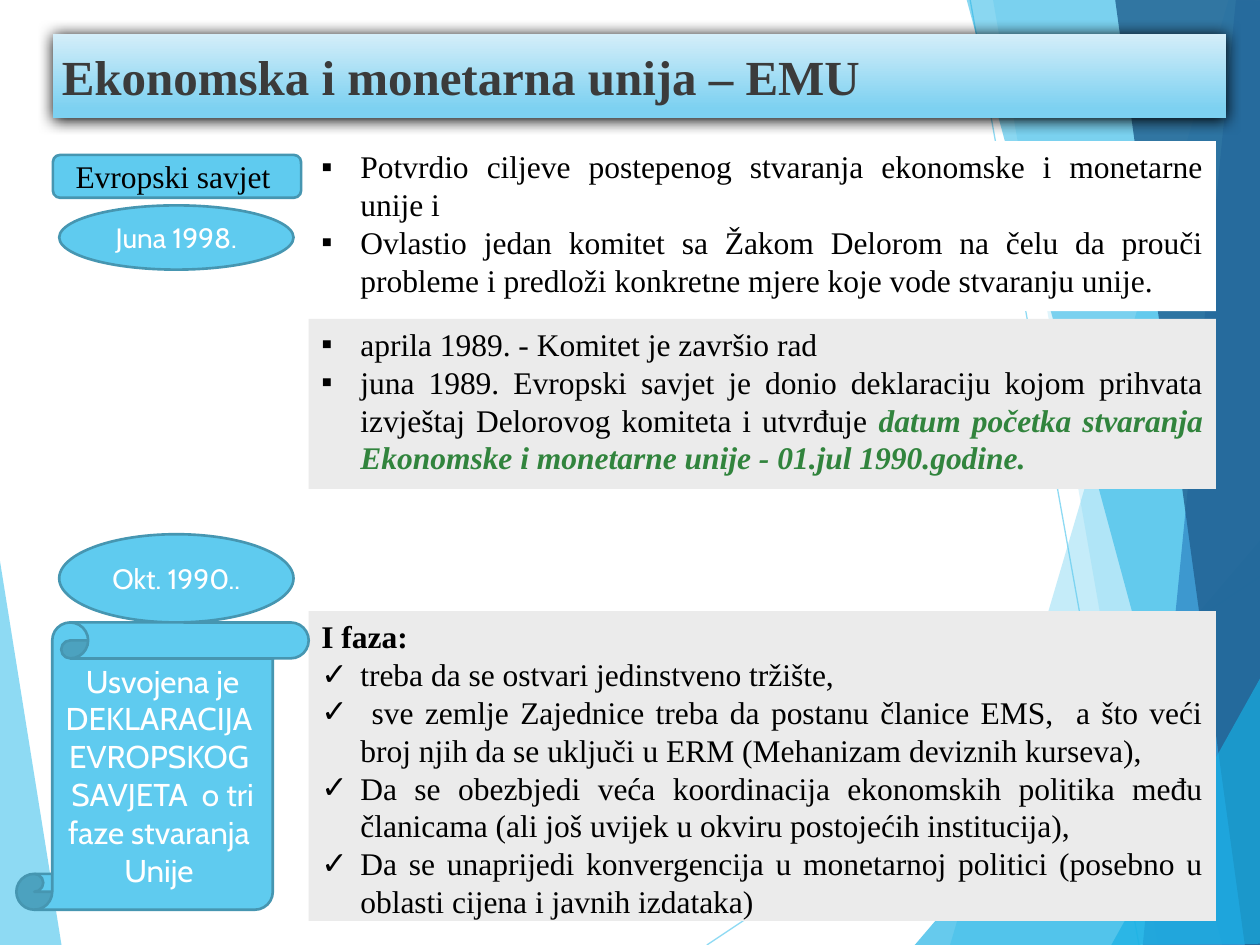
import pptx
import pptx.dml.color
import pptx.enum.dml
import pptx.enum.shapes
import pptx.enum.text
import pptx.oxml
import pptx.oxml.ns
import pptx.util
from pptx.util import Inches

SERIF = "Times New Roman"
SANS = "Cabin"
SKY = "5FCBEF"
BLUE = "17B0E4"
LIGHT_GRAY = "EBEBEB"
ALIGN = pptx.enum.text.PP_ALIGN
ANCHOR = pptx.enum.text.MSO_ANCHOR
SHAPE = pptx.enum.shapes.MSO_SHAPE
NAMESPACE = pptx.oxml.ns.nsdecls("a")

FACETS = [
    (SKY, 70, [(-0.01, 4.39), (0.49, 7.51), (-0.01, 7.5)]),
    (SKY, 36, [(9.75, 0), (7.54, 7.5), (10.02, 7.51), (10.01, 0.01)]),
    (SKY, 20, [(7.88, -0.01), (9.19, 7.5), (10.01, 7.5), (10.01, -0.01)]),
    (BLUE, 66, [(7.26, 7.5), (10, 4.29), (10.01, 7.5)]),
    (BLUE, 50, [(7.67, -0.01), (9.7, 7.5), (10.01, 7.49), (10.01, -0.01)]),
    ("2E83C3", 70, [(9.81, -0.01), (9.07, 7.5), (10.01, 7.5), (10, -0.01)]),
    ("226292", 82, [(8.85, -0.01), (9.88, 7.5), (10.02, 7.5), (10, -0.01)]),
    (BLUE, 66, [(8.82, 7.5), (10.02, 5.35), (10.02, 7.49)]),
]
RAYS = [((5.61, 7.5), (10.01, 4.57)), ((7.7, 0), (9.04, 7.5))]

COUNCIL_ITEMS = [
    ("▪", [("Potvrdio ciljeve postepenog stvaranja ekonomske i monetarne unije i", {})]),
    ("▪", [("Ovlastio jedan komitet sa Žakom Delorom na čelu da prouči probleme "
            "i predloži konkretne mjere koje vode stvaranju unije.", {})]),
]
COMMITTEE_ITEMS = [
    ("▪", [("aprila 1989. - Komitet je završio rad", {})]),
    ("▪", [("juna 1989. Evropski savjet je donio deklaraciju kojom prihvata izvještaj "
            "Delorovog komiteta i utvrđuje ", {}),
           ("datum početka stvaranja Ekonomske i monetarne unije - 01.jul 1990.godine.",
            {"color": "31843D", "bold": True, "italic": True})]),
]
PHASE_ITEMS = [
    (None, [("I faza:", {"bold": True})]),
    ("✓", [("treba da se ostvari jedinstveno tržište,", {})]),
    ("✓", [(" sve zemlje Zajednice treba da postanu članice EMS,  a što veći broj njih "
            "da se uključi u ERM (Mehanizam deviznih kurseva),", {})]),
    ("✓", [("Da se obezbjedi veća koordinacija ekonomskih politika među članicama "
            "(ali još uvijek u okviru postojećih institucija),", {})]),
    ("✓", [("Da se unaprijedi konvergencija u monetarnoj politici "
            "(posebno u oblasti cijena i javnih izdataka)", {})]),
]


def rgb(color):
    return pptx.dml.color.RGBColor.from_string(color)


def add_text(paragraph, text, size=18, font=SERIF, color="000000", bold=False, italic=False):
    run = paragraph.add_run()
    run.text = text
    run.font.size = pptx.util.Pt(size)
    run.font.name = font
    run.font.color.rgb = rgb(color)
    run.font.bold = bold
    run.font.italic = italic


def set_fill(shape, color):
    shape.fill.solid()
    shape.fill.fore_color.rgb = rgb(color)


def set_opacity(shape, percent):
    color = shape._element.spPr.find(".//" + pptx.oxml.ns.qn("a:srgbClr"))
    color.append(pptx.oxml.parse_xml(f'<a:alpha {NAMESPACE} val="{percent * 1000}"/>'))


def place(shape, left, top, width, height):
    shape.left, shape.top = Inches(left), Inches(top)
    shape.width, shape.height = Inches(width), Inches(height)


def add_facet(group, color, opacity, points):
    corners = [(Inches(x), Inches(y)) for x, y in points]
    builder = group.shapes.build_freeform(*corners[0])
    builder.add_line_segments(corners[1:], close=True)
    shape = builder.convert_to_shape()
    shape.shadow.inherit = False
    set_fill(shape, color)
    set_opacity(shape, opacity)
    shape.line.fill.background()


def add_ray(group, start, end):
    ray = group.shapes.add_connector(
        pptx.enum.shapes.MSO_CONNECTOR.STRAIGHT, *(Inches(value) for value in start + end))
    ray.line.color.rgb = rgb(SKY)
    ray.line.width = pptx.util.Pt(0.75)
    set_opacity(ray, 70)
    ray._element.spPr.append(pptx.oxml.parse_xml(f"<a:effectLst {NAMESPACE}/>"))


def add_backdrop(slide):
    group = slide.shapes.add_group_shape()
    add_facet(group, *FACETS[0])
    for start, end in RAYS:
        add_ray(group, start, end)
    for facet in FACETS[1:]:
        add_facet(group, *facet)
    group._element.getparent().insert(2, group._element)


def fill_title(title, text):
    place(title, 0.42, 0.27, 9.31, 0.67)
    title.fill.gradient()
    title.fill.gradient_angle = 270
    for stop, position, color in zip(title.fill.gradient_stops, (0, 0.88), ("D4EEF9", "7DD1F1")):
        stop.position = position
        stop.color.rgb = rgb(color)
    properties = title._element.spPr
    properties.insert(1, pptx.oxml.parse_xml(
        f'<a:prstGeom {NAMESPACE} prst="roundRect"><a:avLst/></a:prstGeom>'))
    properties.append(pptx.oxml.parse_xml(
        f'<a:effectLst {NAMESPACE}><a:outerShdw blurRad="{pptx.util.Pt(8.5)}" '
        f'dist="{pptx.util.Pt(1)}" dir="5400000" algn="ctr" rotWithShape="0">'
        '<a:srgbClr val="000000"/></a:outerShdw></a:effectLst>'))
    frame = title.text_frame
    frame.auto_size = pptx.enum.text.MSO_AUTO_SIZE.NONE
    frame.vertical_anchor = ANCHOR.MIDDLE
    frame.margin_left = frame.margin_right = Inches(0.07)
    frame.margin_top = frame.margin_bottom = Inches(0.04)
    frame.paragraphs[0].alignment = ALIGN.LEFT
    add_text(frame.paragraphs[0], text, size=28, color="3B3B3B", bold=True)


def set_bullet(paragraph, character):
    properties = paragraph._p.get_or_add_pPr()
    indent = Inches(0.31) if character else 0
    properties.set("marL", str(indent))
    properties.set("indent", str(-indent))
    bullet = f'<a:buChar {NAMESPACE} char="{character}"/>' if character else f"<a:buNone {NAMESPACE}/>"
    properties.append(pptx.oxml.parse_xml(bullet))


def fill_list(body, top, height, color, items):
    place(body, 2.45, top, 7.2, height)
    set_fill(body, color)
    frame = body.text_frame
    frame.auto_size = pptx.enum.text.MSO_AUTO_SIZE.NONE
    frame.vertical_anchor = ANCHOR.TOP
    for index, (character, runs) in enumerate(items):
        paragraph = frame.add_paragraph() if index else frame.paragraphs[0]
        set_bullet(paragraph, character)
        paragraph.alignment = ALIGN.JUSTIFY
        paragraph.space_before = pptx.util.Pt(0)
        for text, text_format in runs:
            add_text(paragraph, text, **text_format)


def add_label(slide, kind, left, top, width, height, lines, **text_format):
    shape = slide.shapes.add_shape(kind, Inches(left), Inches(top), Inches(width), Inches(height))
    shape.shadow.inherit = False
    set_fill(shape, SKY)
    shape.line.color.rgb = rgb("4696B1")
    shape.line.width = pptx.util.Pt(1.5)
    frame = shape.text_frame
    frame.word_wrap = True
    frame.vertical_anchor = ANCHOR.MIDDLE
    for index, line in enumerate(lines):
        paragraph = frame.add_paragraph() if index else frame.paragraphs[0]
        paragraph.alignment = ALIGN.CENTER
        add_text(paragraph, line, **text_format)


def main():
    presentation = pptx.Presentation()
    presentation.slide_width, presentation.slide_height = Inches(10), Inches(7.5)
    slide = presentation.slides.add_slide(presentation.slide_layouts.get_by_name("Comparison"))
    title, council, committee, phase, spare = slide.placeholders
    spare._element.getparent().remove(spare._element)

    add_backdrop(slide)
    fill_title(title, "Ekonomska i monetarna unija – EMU")
    fill_list(council, 1.12, 1.35, "FFFFFF", COUNCIL_ITEMS)
    fill_list(committee, 2.53, 1.35, LIGHT_GRAY, COMMITTEE_ITEMS)
    fill_list(phase, 4.85, 2.46, LIGHT_GRAY, PHASE_ITEMS)

    white_sans = {"font": SANS, "color": "FFFFFF"}
    add_label(slide, SHAPE.ROUNDED_RECTANGLE, 0.42, 1.23, 1.97, 0.34, ["Evropski savjet "])
    add_label(slide, SHAPE.OVAL, 0.47, 1.63, 1.86, 0.51, ["Juna 1998."], size=16, **white_sans)
    add_label(slide, SHAPE.OVAL, 0.47, 4.24, 1.86, 0.7, ["Okt. 1990.."], size=16, **white_sans)
    add_label(slide, SHAPE.VERTICAL_SCROLL, 0.13, 4.94, 2.32, 2.28,
              ["Usvojena je DEKLARACIJA ", "EVROPSKOG ", "SAVJETA  o tri faze stvaranja ", "Unije "],
              **white_sans)
    presentation.save("out.pptx")


if __name__ == "__main__":
    main()
